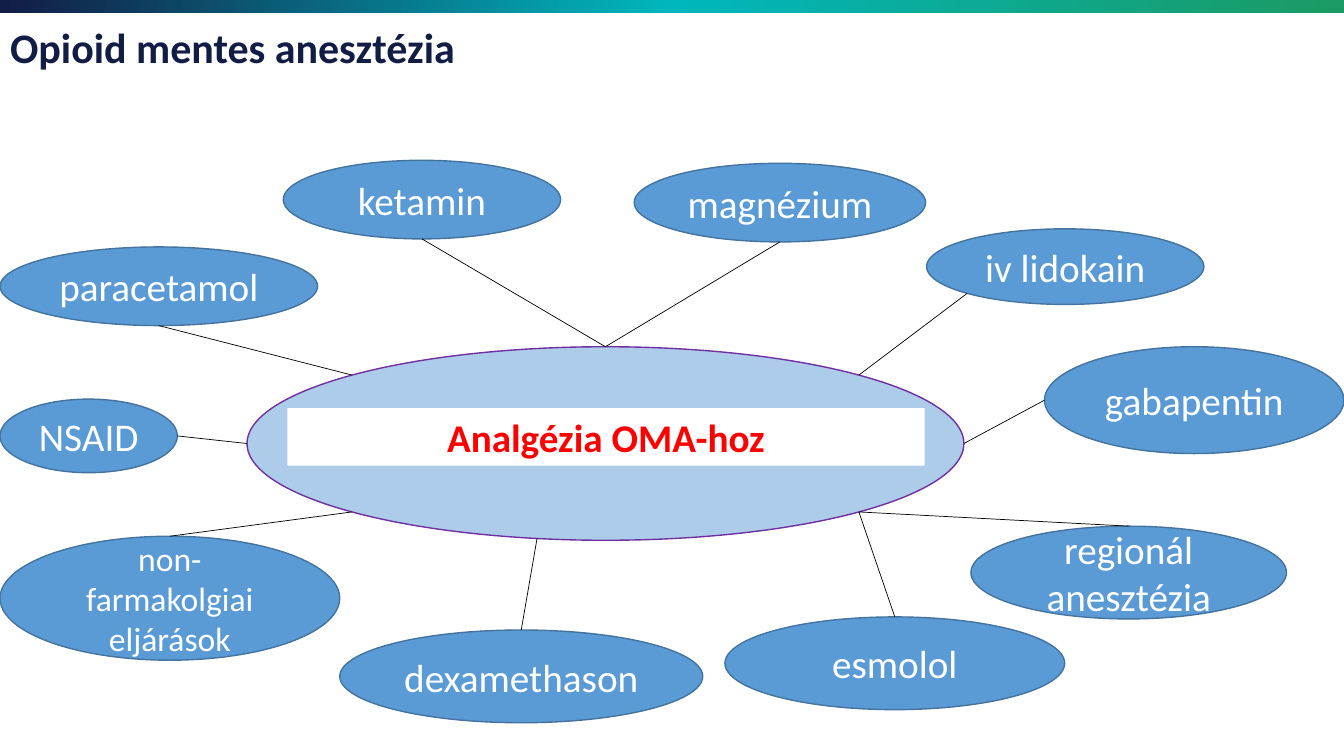
"""Builds the slide on the analgesics around opioid-free anaesthesia."""
from math import cos, radians, sin

from lxml.etree import SubElement
from pptx import Presentation
from pptx.dml.color import RGBColor
from pptx.enum.shapes import MSO_CONNECTOR, MSO_SHAPE
from pptx.enum.text import MSO_ANCHOR, PP_ALIGN
from pptx.oxml.ns import qn
from pptx.util import Inches, Pt

NAVY = RGBColor(0x12, 0x1D, 0x46)
TEAL = RGBColor(0x00, 0xB7, 0xBD)
GREEN = RGBColor(0x1B, 0x9A, 0x63)
BLUE = RGBColor(0x5B, 0x9B, 0xD5)
BLUE_EDGE = RGBColor(0x43, 0x73, 0x9E)
PURPLE = RGBColor(0x70, 0x30, 0xA0)
RED = RGBColor(0xFF, 0x00, 0x00)
WHITE = RGBColor(0xFF, 0xFF, 0xFF)
BLACK = RGBColor(0x00, 0x00, 0x00)

TOP, RIGHT, BOTTOM, LEFT = -90, 0, 90, 180
HUB = (2.45, 3.44, 7.11, 1.92)
DRUGS = [
    ("NSAID", (0, 3.96, 1.76, 0.73), 28, LEFT, RIGHT),
    ("paracetamol", (0, 2.45, 3.15, 0.78), 28, -135, BOTTOM),
    ("ketamin", (2.81, 1.59, 2.75, 0.78), 28, TOP, BOTTOM),
    ("magnézium", (6.29, 1.62, 2.89, 0.78), 28, TOP, BOTTOM),
    ("iv lidokain", (9.19, 2.27, 2.75, 0.75), 28, -45, 135),
    ("gabapentin", (10.36, 3.44, 2.97, 1.06), 28, RIGHT, LEFT),
    ("regionál anesztézia", (9.63, 5.22, 3.13, 0.92), 28, 45, TOP),
    ("dexamethason", (3.37, 6.25, 3.6, 0.92), 28, 101, TOP),
    ("non- farmakolgiai eljárások", (0, 5.32, 3.37, 1.23), 24, 135, TOP),
    ("esmolol", (7.19, 6.12, 3.37, 0.92), 28, 45, TOP),
]


def rim(box, angle):
    left, top, width, height = box
    turn = radians(angle)
    return (Inches(left + width / 2 * (1 + cos(turn))),
            Inches(top + height / 2 * (1 + sin(turn))))


def write(holder, text, align, anchor, **font_values):
    frame = holder.text_frame
    frame.word_wrap = True
    frame.vertical_anchor = anchor
    paragraph = frame.paragraphs[0]
    paragraph.text = text
    paragraph.alignment = align
    color = font_values.pop("color")
    for key, value in font_values.items():
        setattr(paragraph.font, key, value)
    paragraph.font.name = "Calibri"
    paragraph.font.color.rgb = color


prs = Presentation()
prs.slide_width, prs.slide_height = Inches(13.33), Inches(7.5)
slide = prs.slides.add_slide(prs.slide_layouts[5])
shapes = slide.shapes

band = shapes.add_shape(MSO_SHAPE.RECTANGLE, 0, 0, prs.slide_width, Inches(0.13))
band.shadow.inherit = False
band.line.fill.background()
band.fill.gradient()
band.fill.gradient_angle = 0
stops = band._element.spPr.find(qn("a:gradFill")).find(qn("a:gsLst"))
stops.clear()
for position, color in ((0, NAVY), (50000, TEAL), (100000, GREEN)):
    stop = SubElement(stops, qn("a:gs"), pos=str(position))
    SubElement(stop, qn("a:srgbClr"), val=str(color))

title = shapes.title
title.left, title.top = Inches(0), Inches(0.16)
title.width, title.height = Inches(11.49), Inches(0.61)
write(title, "Opioid mentes anesztézia", PP_ALIGN.LEFT, MSO_ANCHOR.MIDDLE,
      size=Pt(30), bold=True, color=NAVY)

hub = shapes.add_shape(MSO_SHAPE.OVAL, *map(Inches, HUB))
hub.shadow.inherit = False
hub.fill.solid()
hub.fill.fore_color.rgb = BLUE
hub_color = hub._element.spPr.find(qn("a:solidFill")).find(qn("a:srgbClr"))
SubElement(hub_color, qn("a:alpha"), val="50000")
hub.line.color.rgb = PURPLE
hub.line.width = Pt(1)

for name, box, size, hub_angle, drug_angle in DRUGS:
    drug = shapes.add_shape(MSO_SHAPE.OVAL, *map(Inches, box))
    drug.shadow.inherit = False
    drug.fill.solid()
    drug.fill.fore_color.rgb = BLUE
    drug.line.color.rgb = BLUE_EDGE
    drug.line.width = Pt(1)
    write(drug, name, PP_ALIGN.CENTER, MSO_ANCHOR.MIDDLE, size=Pt(size), color=WHITE)

    link = shapes.add_connector(MSO_CONNECTOR.STRAIGHT,
                                *rim(HUB, hub_angle), *rim(box, drug_angle))
    if hub_angle == TOP:
        link.begin_connect(hub, 0)
    if drug_angle == TOP:
        link.end_connect(drug, 0)
    link.line.color.rgb = BLACK
    link.line.width = Pt(0.5)
    SubElement(link._element.spPr, qn("a:effectLst"))

goal = shapes.add_textbox(Inches(2.85), Inches(4.05), Inches(6.32), Inches(0.57))
goal.fill.solid()
goal.fill.fore_color.rgb = WHITE
write(goal, "Analgézia OMA-hoz", PP_ALIGN.CENTER, MSO_ANCHOR.TOP,
      size=Pt(28), bold=True, color=RED)

prs.save("out.pptx")
